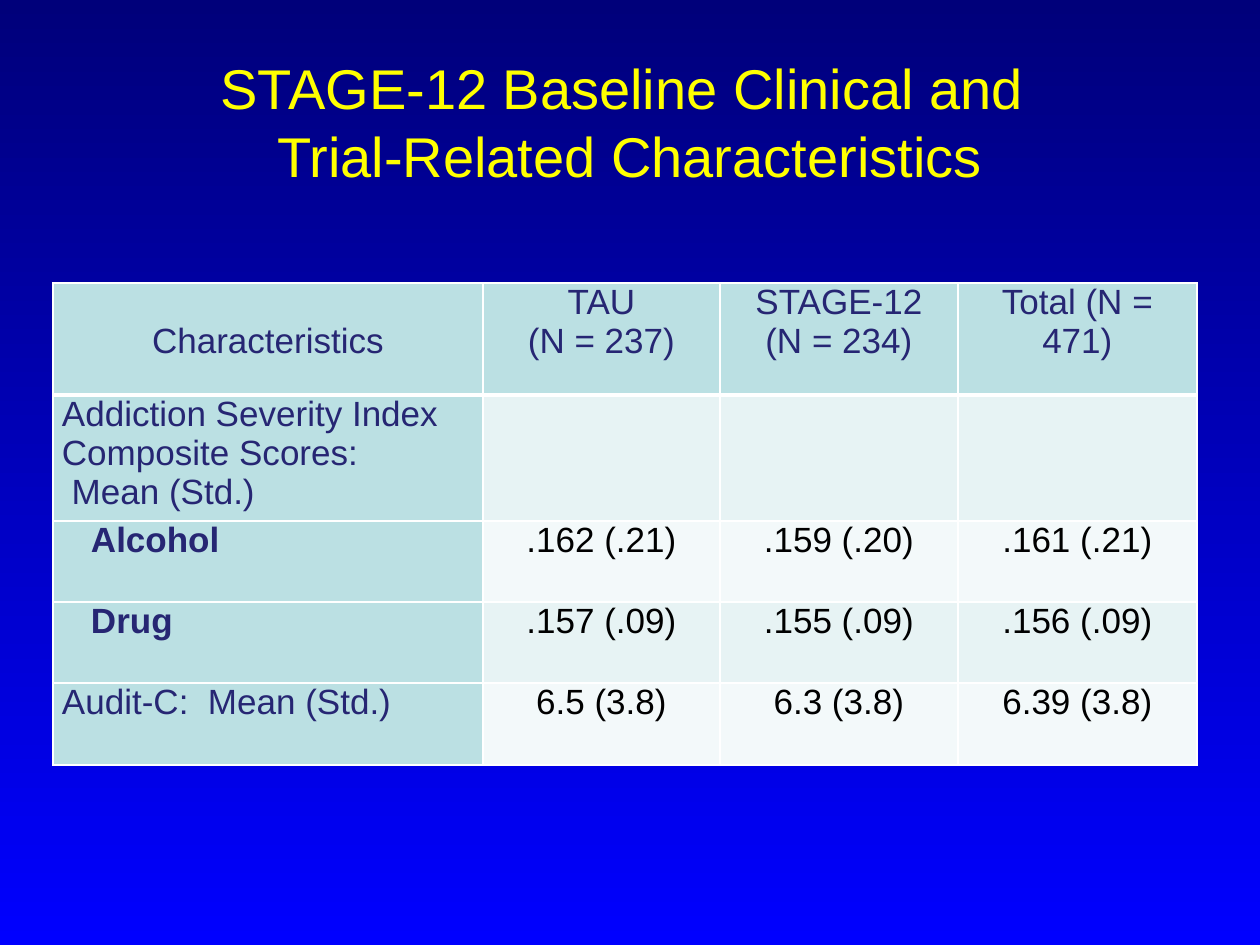
import pptx
import pptx.dml.color
import pptx.enum.text
import pptx.oxml
import pptx.oxml.ns
import pptx.util

EMU_PER_PX = 914400 / 126
FONT = "Arial"
COLORS = {
    "sky_top": "00007A",
    "sky_bottom": "0000FF",
    "title": "FFFF00",
    "label": "262673",
    "value": "000000",
    "label_fill": "BBE0E3",
    "odd_fill": "E7F3F4",
    "even_fill": "F3F9FA",
    "border": "FFFFFF",
}
HEADINGS = ["Characteristics", "TAU\n(N = 237)", "STAGE-12\n(N = 234)", "Total (N = 471)"]
MEASURES = [
    ["Addiction Severity Index Composite Scores:\n Mean (Std.)", "", "", ""],
    ["Alcohol", ".162 (.21)", ".159 (.20)", ".161 (.21)"],
    ["Drug", ".157 (.09)", ".155 (.09)", ".156 (.09)"],
    ["Audit-C:  Mean (Std.)", "6.5 (3.8)", "6.3 (3.8)", "6.39 (3.8)"],
]
SUBSCORES = ("Alcohol", "Drug")
COLUMN_WIDTHS = [430, 237, 238, 239]
ROW_HEIGHTS = [112, 117, 81, 81, 82]
LINE_HEIGHT = 39
CELL_INSET = 9
SUBSCORE_INSET = 38


def px(length):
    return pptx.util.Emu(round(length * EMU_PER_PX))


def rgb(name):
    return pptx.dml.color.RGBColor.from_string(COLORS[name])


def style_text(frame, size, color, centered, bold=False):
    align = pptx.enum.text.PP_ALIGN
    for paragraph in frame.paragraphs:
        paragraph.alignment = align.CENTER if centered else align.LEFT
        for run in paragraph.runs:
            run.font.name = FONT
            run.font.size = pptx.util.Pt(size)
            run.font.bold = bold
            run.font.color.rgb = rgb(color)


def paint_background(slide):
    fill = slide.background.fill
    fill.gradient()
    fill.gradient_angle = 270
    for stop, name in zip(fill.gradient_stops, ("sky_top", "sky_bottom")):
        stop.color.rgb = rgb(name)


def add_title(slide, left, top, width, height):
    title = slide.shapes.add_textbox(px(left), px(top), px(width), px(height))
    frame = title.text_frame
    frame.word_wrap = True
    frame.vertical_anchor = pptx.enum.text.MSO_ANCHOR.MIDDLE
    frame.text = "STAGE-12 Baseline Clinical and \vTrial-Related Characteristics"
    style_text(frame, 32, "title", True)


def add_borders(cell, bottom_width):
    properties = cell._tc.get_or_add_tcPr()
    for side, width in (("L", 1), ("R", 1), ("T", 1), ("B", bottom_width)):
        properties.append(pptx.oxml.parse_xml(
            f'<a:ln{side} {pptx.oxml.ns.nsdecls("a")} w="{pptx.util.Pt(width)}">'
            f'<a:solidFill><a:srgbClr val="{COLORS["border"]}"/></a:solidFill>'
            f'</a:ln{side}>'))


def fill_cell(cell, text, row, column):
    is_heading, is_label = row == 0, column == 0
    is_subscore = text in SUBSCORES
    cell.margin_left = px(SUBSCORE_INSET if is_subscore else CELL_INSET)
    cell.margin_right = px(CELL_INSET)
    cell.margin_top = px(LINE_HEIGHT if is_heading and is_label else 0)
    cell.margin_bottom = 0
    add_borders(cell, 3 if is_heading else 1)
    cell.fill.solid()
    if is_heading or is_label:
        cell.fill.fore_color.rgb = rgb("label_fill")
    else:
        cell.fill.fore_color.rgb = rgb("odd_fill" if row % 2 else "even_fill")
    cell.text_frame.text = text
    color = "label" if is_heading or is_label else "value"
    style_text(cell.text_frame, 20, color, is_heading or not is_label, is_subscore)


def add_characteristics(slide, left, top, width, height):
    rows = [HEADINGS] + MEASURES
    table = slide.shapes.add_table(len(rows), len(HEADINGS), px(left), px(top),
                                   px(width), px(height)).table
    table.first_row = False
    table.horz_banding = False
    for column, column_width in zip(table.columns, COLUMN_WIDTHS):
        column.width = px(column_width)
    for table_row, row_height in zip(table.rows, ROW_HEIGHTS):
        table_row.height = px(row_height)
    for row, texts in enumerate(rows):
        for column, text in enumerate(texts):
            fill_cell(table.cell(row, column), text, row, column)


def main():
    presentation = pptx.Presentation()
    presentation.slide_width = px(1260)
    presentation.slide_height = px(945)
    slide = presentation.slides.add_slide(presentation.slide_layouts[6])
    paint_background(slide)
    add_title(slide, 63, 42, 1134, 158)
    add_characteristics(slide, 53, 283, sum(COLUMN_WIDTHS), sum(ROW_HEIGHTS))
    presentation.save("out.pptx")


if __name__ == "__main__":
    main()
